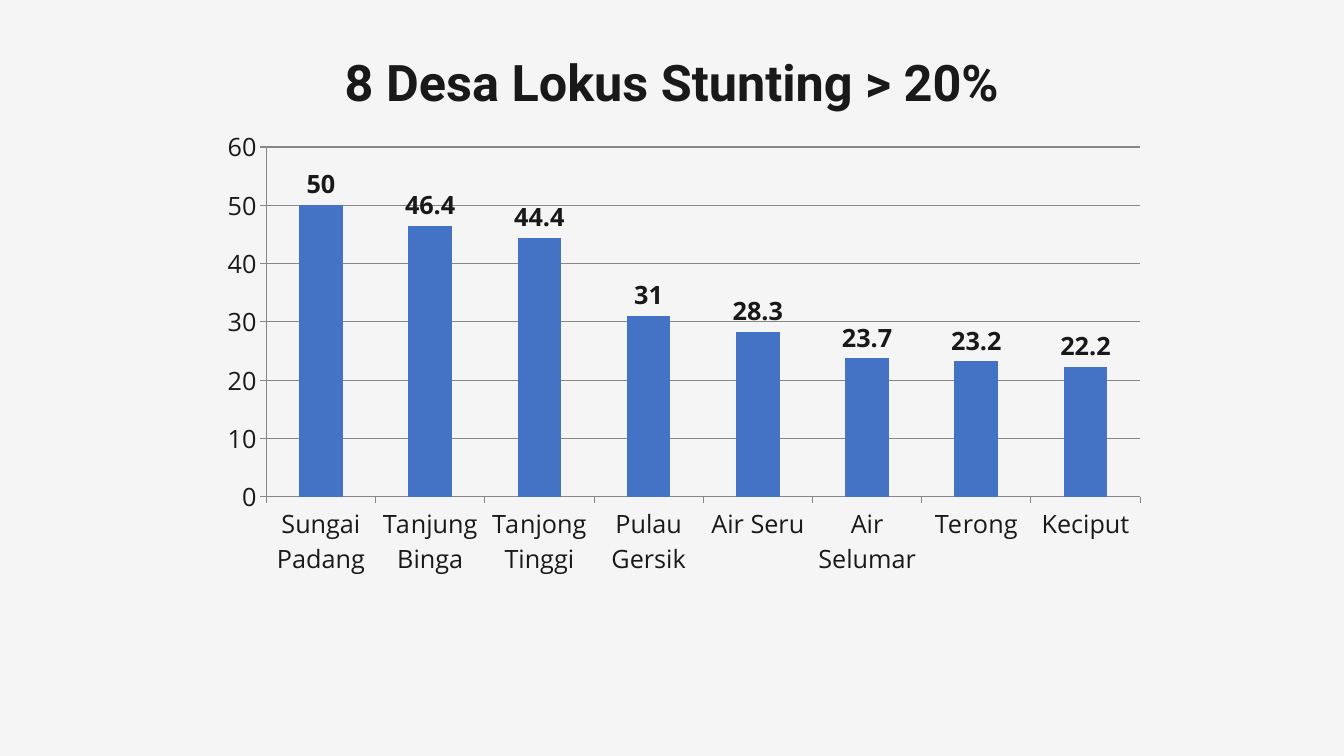
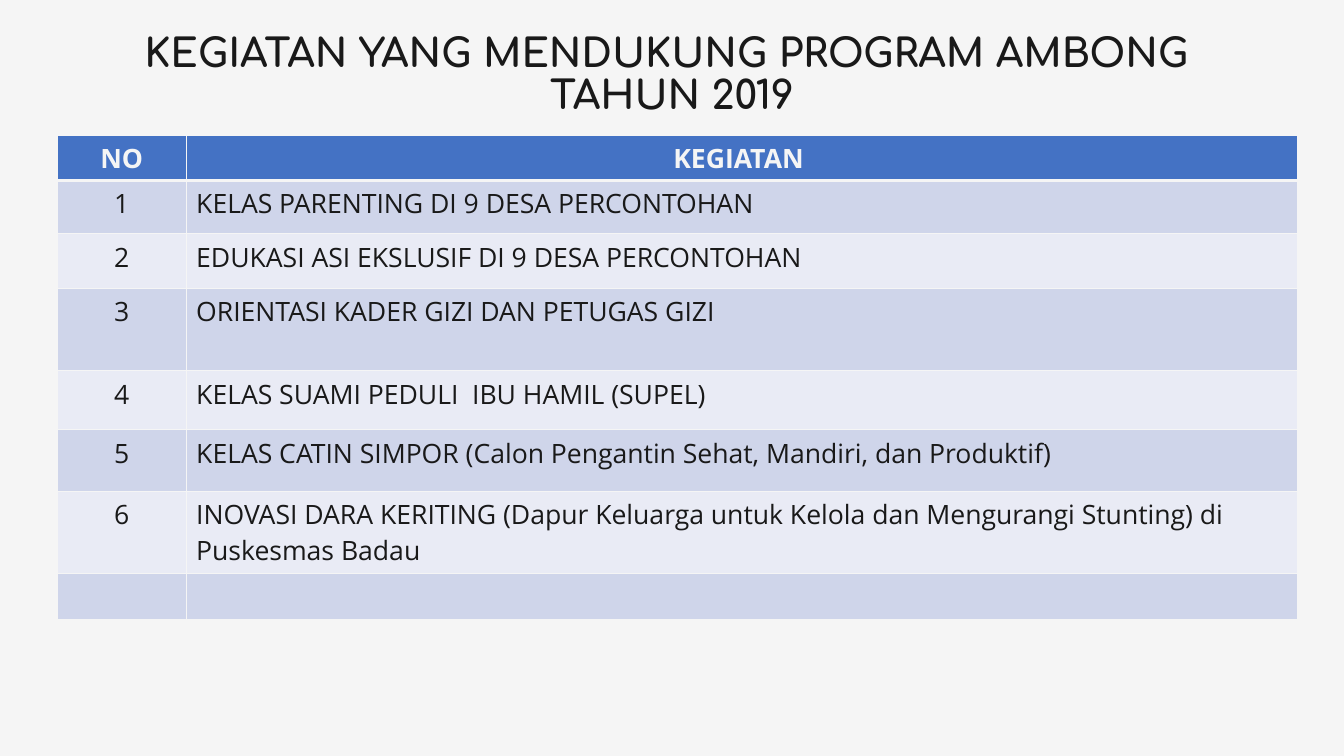
from lxml import etree
from pptx import Presentation
from pptx.chart.data import CategoryChartData
from pptx.dml.color import RGBColor
from pptx.enum.chart import XL_CHART_TYPE, XL_LABEL_POSITION, XL_TICK_MARK
from pptx.enum.text import MSO_ANCHOR, PP_ALIGN
from pptx.oxml.ns import qn
from pptx.util import Pt

COLUMN = XL_CHART_TYPE.COLUMN_CLUSTERED
OUTSIDE_END = XL_LABEL_POSITION.OUTSIDE_END
TICK_OUT = XL_TICK_MARK.OUTSIDE
MIDDLE = MSO_ANCHOR.MIDDLE
CENTER, LEFT = PP_ALIGN.CENTER, PP_ALIGN.LEFT

COLORS = {
    "paper": "F5F5F5",
    "ink": "191919",
    "blue": "4472C4",
    "band_dark": "CFD5EA",
    "band_light": "E9EBF5",
    "grid": "878787",
}
BODY_FONT = "Open Sans"


def rgb(name):
    return RGBColor.from_string(COLORS[name])


def style_font(font, size, color="ink", bold=False, name=BODY_FONT):
    font.name, font.size, font.bold = name, Pt(size), bold
    font.color.rgb = rgb(color)


def write(tf, text, align=LEFT, spacing=1.0, **fmt):
    tf.word_wrap = True
    p = tf.paragraphs[0]
    p.alignment, p.line_spacing = align, spacing
    for i, line in enumerate(text.split("\n")):
        if i:
            p.add_line_break()
        r = p.add_run()
        r.text = line
        style_font(r.font, **fmt)


class Deck:
    """Holds the presentation, its shared style and the current slide."""

    def __init__(self):
        self.prs = Presentation()
        self.prs.slide_width, self.prs.slide_height = Pt(960), Pt(540)
        self.s = None

    def slide(self):
        self.s = self.prs.slides.add_slide(self.prs.slide_layouts[6])
        fill = self.s.background.fill
        fill.solid()
        fill.fore_color.rgb = rgb("paper")

    def title(self, text, box, size, font):
        tf = self.s.shapes.add_textbox(*map(Pt, box)).text_frame
        tf.vertical_anchor = MIDDLE
        write(tf, text, CENTER, 0.9, size=size, bold=True, name=font)

    def column_chart(self, values, box):
        data = CategoryChartData()
        data.categories = list(values)
        data.add_series("Series 1", list(values.values()))
        chart = self.s.shapes.add_chart(COLUMN, *map(Pt, box), data).chart
        chart.has_title = chart.has_legend = False
        style_font(chart.font, 18)
        for axis in (chart.category_axis, chart.value_axis):
            axis.major_tick_mark = TICK_OUT
            self.line(axis.format.line)
        value_axis = chart.value_axis
        value_axis.minimum_scale, value_axis.maximum_scale = 0, 60
        value_axis.major_unit = 10
        self.line(value_axis.major_gridlines.format.line)
        plot = chart.plots[0]
        plot.gap_width, plot.vary_by_categories = 150, False
        fill = plot.series[0].format.fill
        fill.solid()
        fill.fore_color.rgb = rgb("blue")
        plot.has_data_labels = True
        labels = plot.data_labels
        labels.show_value, labels.position = True, OUTSIDE_END
        style_font(labels.font, 18, bold=True)

    def line(self, line):
        line.color.rgb = rgb("grid")
        line.width = Pt(0.75)

    def table(self, rows, left, top, widths, heights):
        shape = self.s.shapes.add_table(
            len(rows), len(widths), Pt(left), Pt(top), Pt(sum(widths)), Pt(sum(heights)))
        table = shape.table
        for column, width in zip(table.columns, widths):
            column.width = Pt(width)
        for i, (row, height) in enumerate(zip(rows, heights)):
            table.rows[i].height = Pt(height)
            head = i == 0
            band = "blue" if head else "band_dark" if i % 2 else "band_light"
            for j, text in enumerate(row):
                cell = table.cell(i, j)
                cell.fill.solid()
                cell.fill.fore_color.rgb = rgb(band)
                self.borders(cell, top=3 if i == 1 else 1, bottom=3 if head else 1)
                if text:
                    write(cell.text_frame, text, CENTER if head or j == 0 else LEFT,
                          size=19, bold=head, color="paper" if head else "ink")

    def borders(self, cell, top, bottom):
        tcPr = cell._tc.get_or_add_tcPr()
        for i, (side, width) in enumerate(zip("LRTB", (1, 1, top, bottom))):
            ln = etree.Element(qn(f"a:ln{side}"), w=str(Pt(width)))
            fill = etree.SubElement(ln, qn("a:solidFill"))
            etree.SubElement(fill, qn("a:srgbClr"), val=COLORS["paper"])
            tcPr.insert(i, ln)


STUNTING = {
    "Sungai Padang": 50,
    "Tanjung Binga": 46.4,
    "Tanjong Tinggi": 44.4,
    "Pulau Gersik": 31,
    "Air Seru": 28.3,
    "Air Selumar": 23.7,
    "Terong": 23.2,
    "Keciput": 22.2,
}
ACTIVITIES = [
    "KELAS PARENTING DI 9 DESA PERCONTOHAN",
    "EDUKASI ASI EKSLUSIF DI 9 DESA PERCONTOHAN",
    "ORIENTASI KADER GIZI DAN PETUGAS GIZI",
    "KELAS SUAMI PEDULI  IBU HAMIL (SUPEL)",
    "KELAS CATIN SIMPOR (Calon Pengantin Sehat, Mandiri, dan Produktif)",
    "INOVASI DARA KERITING (Dapur Keluarga untuk Kelola dan Mengurangi Stunting)"
    " di Puskesmas Badau",
]


def main():
    deck = Deck()

    deck.slide()
    deck.title("8 Desa Lokus Stunting > 20%", (66, 29, 828, 63), 36, "Roboto")
    deck.column_chart(STUNTING, (149, 86, 679, 332))

    deck.slide()
    deck.title("KEGIATAN YANG MENDUKUNG PROGRAM AMBONG \nTAHUN 2019",
               (48, 11, 864, 86), 28, "Comfortaa")
    rows = [("NO", "KEGIATAN ")]
    rows += [(str(n), text) for n, text in enumerate(ACTIVITIES, 1)]
    rows.append(("", ""))
    deck.table(rows, 41, 96.5, (92, 794), (32.5, 38, 39, 59, 42, 44, 59, 32.5))

    deck.prs.save("out.pptx")


if __name__ == "__main__":
    main()
